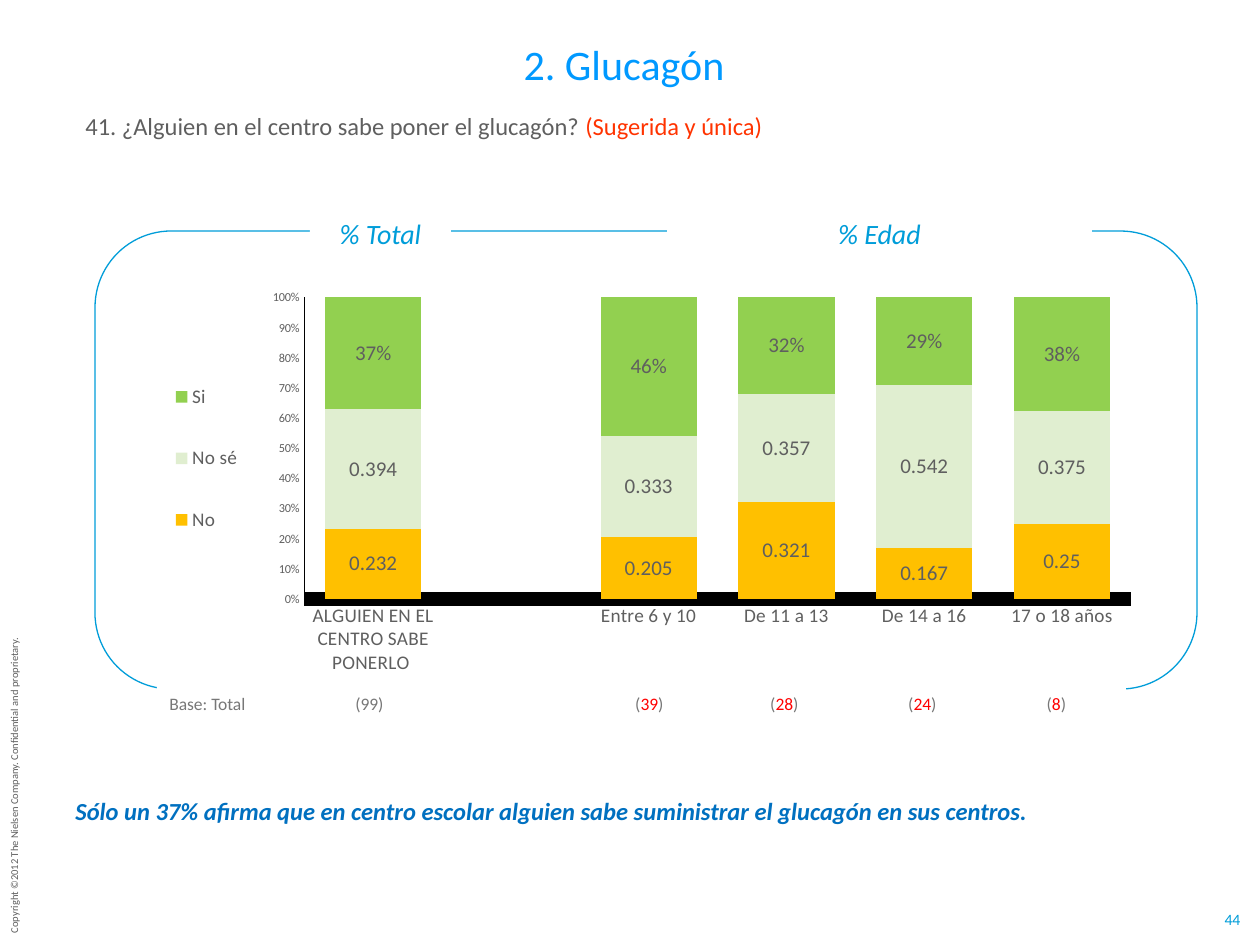
from lxml.etree import SubElement
from pptx import Presentation
from pptx.chart.data import CategoryChartData
from pptx.dml.color import RGBColor
from pptx.enum.chart import XL_CHART_TYPE as ChartType, XL_LEGEND_POSITION as LegendPos
from pptx.enum.chart import XL_TICK_MARK as Tick
from pptx.enum.shapes import MSO_SHAPE as Shape
from pptx.enum.text import MSO_ANCHOR as Anchor, MSO_AUTO_SIZE as AutoSize, PP_ALIGN as Align
from pptx.oxml import parse_xml
from pptx.oxml.ns import nsdecls, qn
from pptx.util import Emu, Pt

SCALE = 914400 / 126
COLORS = {
    "white": "FFFFFF", "black": "000000", "grey": "5F5F5F", "base": "777777",
    "cyan": "009DD9", "title": "0099FF", "hint": "FF3300", "count": "FF0000",
    "finding": "0070C0", "no": "FFC000", "unsure": "E0EED0", "yes": "92D050",
}
AGES = ["Entre 6 y 10", "De 11 a 13", "De 14 a 16", "17 o 18 años"]
SERIES = [
    ("No", "no", "General", [0.232, None, 0.205, 0.321, 0.167, 0.25]),
    ("No sé", "unsure", "General", [0.394, None, 0.333, 0.357, 0.542, 0.375]),
    ("Si", "yes", "0%", [0.37, None, 0.46, 0.32, 0.29, 0.38]),
]
BASE_TABS = [200, 480, 615, 753, 887]
AGE_BASES = [39, 28, 24, 8]


def px(length):
    return Emu(round(length * SCALE))


def rgb(color):
    return RGBColor.from_string(COLORS[color])


def apply(target, values):
    for name, value in values.items():
        setattr(target, name, value)


def style_font(font, size, color, **extra):
    apply(font, {"name": "Calibri", "size": Pt(size), **extra})
    font.color.rgb = rgb(color)


def style_line(line, color, width):
    line.color.rgb = rgb(color)
    line.width = Pt(width)


def write(holder, runs, size, align=Align.LEFT, tabs=(), frame_format=None, **extra):
    frame = holder.text_frame
    apply(frame, {"word_wrap": True, "vertical_anchor": Anchor.TOP, **(frame_format or {})})
    paragraph = frame.paragraphs[0]
    paragraph.alignment = align
    if tabs:
        stops = SubElement(paragraph._p.get_or_add_pPr(), qn("a:tabLst"))
        for stop in tabs:
            SubElement(stops, qn("a:tab"), pos=str(px(stop)), algn="ctr")
    for words, color in runs:
        run = paragraph.add_run()
        run.text = words
        style_font(run.font, size, color, **extra)


def add_text(slide, box, runs, size, rotation=0, **options):
    holder = slide.shapes.add_textbox(*map(px, box))
    holder.rotation = rotation
    write(holder, runs, size, **options)


def add_panel(slide, box, kind=Shape.RECTANGLE, outline=None):
    panel = slide.shapes.add_shape(kind, *map(px, box))
    panel.shadow.inherit = False
    panel.fill.solid()
    panel.fill.fore_color.rgb = rgb("white")
    if outline:
        style_line(panel.line, outline, 0.75)
    else:
        panel.line.fill.background()
    return panel


def place(element, index, x, y, w, h, target=""):
    for old in element.findall(qn("c:layout")):
        element.remove(old)
    modes = '<c:xMode val="edge"/><c:yMode val="edge"/>'
    sizes = "".join(f'<c:{k} val="{v}"/>' for k, v in zip("xywh", (x, y, w, h)))
    element.insert(index, parse_xml(
        f'<c:layout {nsdecls("c")}><c:manualLayout>{target}{modes}{sizes}'
        '</c:manualLayout></c:layout>'))


def style_axis(axis, size, width):
    apply(axis, {"has_major_gridlines": False, "major_tick_mark": Tick.NONE,
                 "minor_tick_mark": Tick.NONE})
    style_font(axis.tick_labels.font, size, "grey")
    style_line(axis.format.line, "black", width)


def add_answers_chart(slide, box):
    answers = CategoryChartData()
    answers.categories = ["ALGUIEN EN EL CENTRO SABE PONERLO ", "", *AGES]
    for name, _, _, shares in SERIES:
        answers.add_series(name, shares)
    chart = slide.shapes.add_chart(
        ChartType.COLUMN_STACKED_100, *map(px, box), answers).chart
    apply(chart, {"has_title": False, "has_legend": True})
    style_font(chart.font, 10, "grey")

    plot = chart.plots[0]
    apply(plot, {"gap_width": 43, "overlap": 100, "vary_by_categories": False})
    place(plot._element.getparent(), 0, 0.167, 0.137, 0.82, 0.623,
          '<c:layoutTarget val="inner"/>')
    for series, (_, color, number_format, _) in zip(plot.series, SERIES):
        series.format.fill.solid()
        series.format.fill.fore_color.rgb = rgb(color)
        labels = series.data_labels
        apply(labels, {"show_value": True, "number_format": number_format,
                       "number_format_is_linked": False})
        style_font(labels.font, 12, "grey")

    style_axis(chart.category_axis, 11, 7.75)
    style_axis(chart.value_axis, 7, 0.75)
    apply(chart.value_axis, {"minimum_scale": 0, "maximum_scale": 1, "major_unit": 0.1})
    apply(chart.value_axis.tick_labels,
          {"number_format": "0%", "number_format_is_linked": False})

    legend = chart.legend
    apply(legend, {"position": LegendPos.LEFT, "include_in_layout": False})
    style_font(legend.font, 11, "grey")
    place(legend._element, 1, 0.02, 0.24, 0.1, 0.46)


def main():
    deck = Presentation()
    apply(deck, {"slide_width": px(1260), "slide_height": px(945)})
    slide = deck.slides.add_slide(deck.slide_layouts[6])

    add_text(slide, (-149, 770, 326, 25),
             [("Copyright ©2012 The Nielsen Company. Confidential and proprietary.", "grey")],
             6, rotation=270,
             frame_format={"word_wrap": False, "auto_size": AutoSize.SHAPE_TO_FIT_TEXT})
    margins = dict.fromkeys(("margin_left", "margin_top", "margin_right", "margin_bottom"), 0)
    add_text(slide, (1223, 910, 19, 19), [("44", "cyan")], 9, align=Align.CENTER,
             frame_format={**margins, "word_wrap": False, "vertical_anchor": Anchor.MIDDLE})
    add_text(slide, (104, 32, 1040, 63), [("2. Glucagón", "title")], 24, align=Align.CENTER)
    add_text(slide, (73, 105, 1187, 69),
             [("41. ¿Alguien en el centro sabe poner el glucagón? ", "grey"),
              ("(Sugerida y única)", "hint")], 14)
    add_text(slide, (63, 790, 1155, 43),
             [("Sólo un 37% afirma que en centro escolar alguien sabe suministrar "
               "el glucagón en sus centros.", "finding")],
             14, align=Align.JUSTIFY, bold=True, italic=True)

    add_panel(slide, (95, 231, 1102, 458), Shape.ROUNDED_RECTANGLE, "cyan")
    add_answers_chart(slide, (136, 231, 1008, 484))
    for heading, left, width in [("% Total", 310, 141), ("% Edad", 667, 425)]:
        write(add_panel(slide, (left, 210, width, 47)), [(heading, "cyan")], 16,
              align=Align.CENTER, italic=True)

    base_runs = [("Base: Total\t(99)", "base")]
    for count in AGE_BASES:
        base_runs += [("\t(", "base"), (str(count), "count"), (")", "base")]
    write(add_panel(slide, (157, 687, 969, 34)), base_runs, 10, tabs=BASE_TABS)

    deck.save("out.pptx")


if __name__ == "__main__":
    main()
